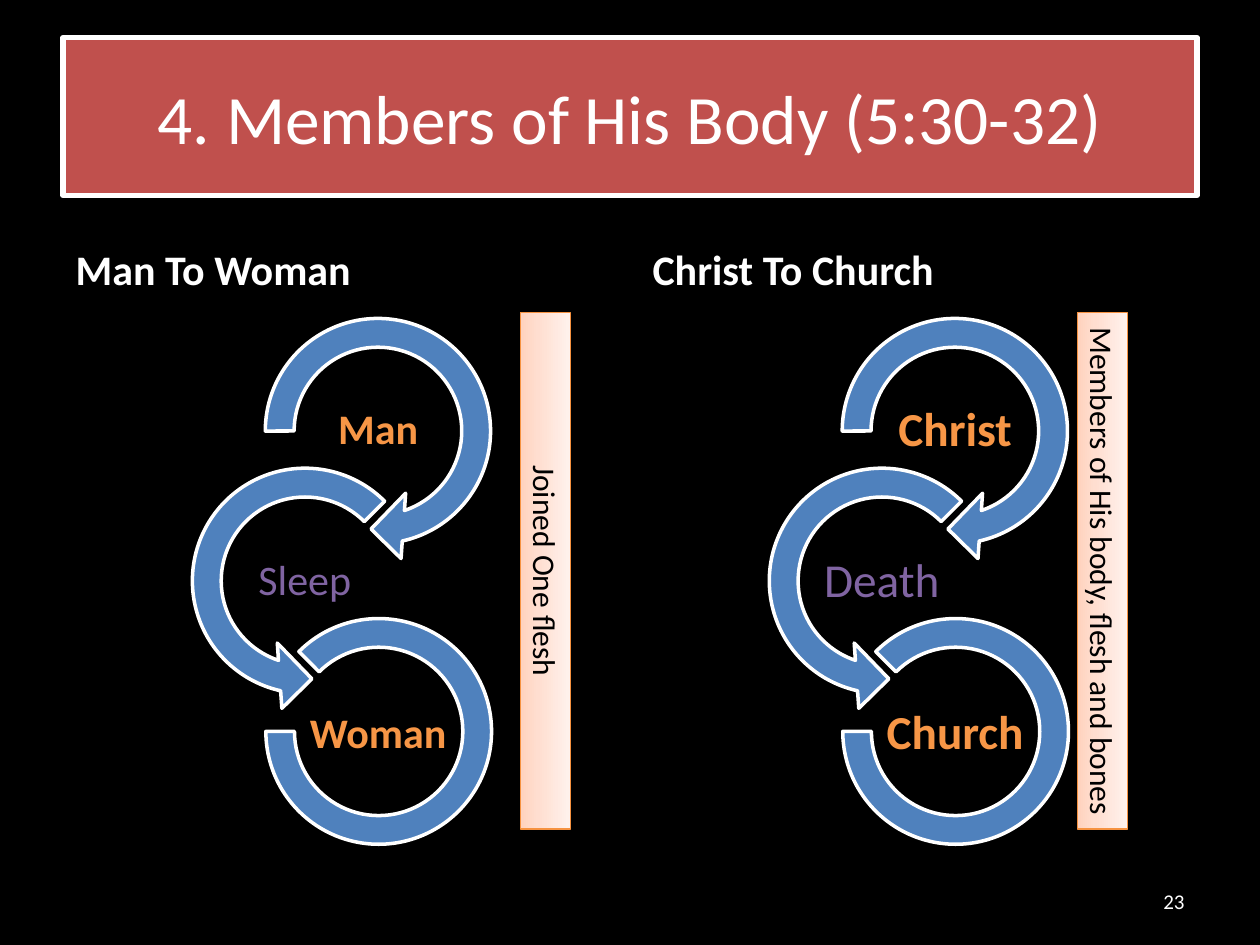
from copy import deepcopy
from dataclasses import dataclass

from pptx import Presentation
from pptx import util as u
from pptx.dml.color import RGBColor
from pptx.enum import shapes, text
from pptx.oxml import ns

BLACK = RGBColor(0x00, 0x00, 0x00)
WHITE = RGBColor(0xFF, 0xFF, 0xFF)
RED = RGBColor(0xC0, 0x50, 0x4D)
BLUE = RGBColor(0x4F, 0x81, 0xBD)
ORANGE = RGBColor(0xF7, 0x96, 0x46)
PURPLE = RGBColor(0x80, 0x64, 0xA2)
BAR_LINE = RGBColor(0xF6, 0x92, 0x40)
BAR_STOPS = (
    (0, RGBColor(0xFF, 0xD2, 0xBD)),
    (0.35, RGBColor(0xFF, 0xDE, 0xD0)),
    (1, RGBColor(0xFF, 0xF2, 0xED)),
)
FONT = "Calibri"
COLUMN_STEP = 11.63


@dataclass(frozen=True)
class Box:
    left: float
    top: float
    width: float
    height: float

    def lengths(self, shift: float = 0) -> tuple:
        values = (self.left + shift, self.top, self.width, self.height)
        return tuple(u.Cm(value) for value in values)


@dataclass(frozen=True)
class Step:
    kind: shapes.MSO_SHAPE
    box: Box
    adjustments: tuple
    label_box: Box
    color: RGBColor
    bold: bool


@dataclass(frozen=True)
class Column:
    heading: str
    placeholder: int
    labels: tuple
    label_size: float
    bar_text: str
    bar_left: float


STEPS = (
    Step(shapes.MSO_SHAPE.CIRCULAR_ARROW, Box(4.98, 6.05, 5.28, 5.28),
         (0.11, 11.42, 45, 108, 0.125), Box(6.15, 7.95, 2.95, 1.47), ORANGE, True),
    Step(shapes.MSO_SHAPE.LEFT_CIRCULAR_ARROW, Box(3.51, 9.07, 5.28, 5.28),
         (0.11, 11.42, 63, 189, 0.125), Box(4.67, 11, 2.95, 1.47), PURPLE, False),
    Step(shapes.MSO_SHAPE.BLOCK_ARC, Box(5.36, 12.47, 4.55, 4.55),
         (135, 108, 0.127), Box(6.15, 14.07, 2.95, 1.47), ORANGE, True),
)
COLUMNS = (
    Column("Man To Woman", 1, ("Man", "Sleep", "Woman"), 24, "Joined One flesh", 5.79),
    Column("Christ To Church", 3, ("Christ", "Death", "Church"), 27,
           "Members of His body, flesh and bones", 17.02),
)


def apply(target, formats: dict) -> None:
    for name, value in formats.items():
        setattr(target, name, value)


def write(shape, content: str, size: float, color: RGBColor, bold: bool = False,
          align=text.PP_ALIGN.LEFT, anchor=text.MSO_ANCHOR.MIDDLE):
    frame = shape.text_frame
    apply(frame, {"text": content, "word_wrap": True,
                  "auto_size": text.MSO_AUTO_SIZE.NONE, "vertical_anchor": anchor})
    paragraph = frame.paragraphs[0]
    paragraph.alignment = align
    font = paragraph.runs[0].font
    apply(font, {"name": FONT, "size": u.Pt(size), "bold": bold})
    font.color.rgb = color
    return frame


def outline(shape, color: RGBColor, width: float) -> None:
    shape.line.color.rgb = color
    shape.line.width = u.Pt(width)


def place(shape, box: Box, shift: float = 0) -> None:
    apply(shape, dict(zip(("left", "top", "width", "height"), box.lengths(shift))))


def add_step(slide, step: Step, label: str, size: float, shift: float) -> None:
    arc = slide.shapes.add_shape(step.kind, *step.box.lengths(shift))
    arc.shadow.inherit = False
    for index, value in enumerate(step.adjustments):
        arc.adjustments[index] = value
    arc.fill.solid()
    arc.fill.fore_color.rgb = BLUE
    outline(arc, WHITE, 2)

    label_shape = slide.shapes.add_textbox(*step.label_box.lengths(shift))
    frame = write(label_shape, label, size, step.color, step.bold, text.PP_ALIGN.CENTER)
    margins = ("margin_left", "margin_top", "margin_right", "margin_bottom")
    apply(frame, dict.fromkeys(margins, u.Cm(0.05)))
    frame.paragraphs[0].line_spacing = 0.9


def add_bar(slide, content: str, left: float) -> None:
    bar = slide.shapes.add_shape(shapes.MSO_SHAPE.RECTANGLE,
                                 *Box(left, 11, 10.41, 1.02).lengths())
    bar.rotation = 90
    bar.shadow.inherit = False
    bar.fill.gradient()
    bar.fill.gradient_angle = 90
    stop_list = bar.element.spPr.find(".//" + ns.qn("a:gsLst"))
    stop_list.append(deepcopy(stop_list[0]))
    for stop, (position, color) in zip(bar.fill.gradient_stops, BAR_STOPS):
        stop.position = position
        stop.color.rgb = color
    outline(bar, BAR_LINE, 0.75)
    write(bar, content, 18, BLACK, align=text.PP_ALIGN.CENTER, anchor=text.MSO_ANCHOR.TOP)


def add_column(slide, column: Column, shift: float) -> None:
    heading = slide.placeholders[column.placeholder]
    place(heading, Box(1.27, 4.27, 11.23, 1.78), shift)
    write(heading, column.heading, 24, WHITE, True, anchor=text.MSO_ANCHOR.BOTTOM)
    for step, label in zip(STEPS, column.labels):
        add_step(slide, step, label, column.label_size, shift)
    add_bar(slide, column.bar_text, column.bar_left)


def main() -> None:
    presentation = Presentation()
    apply(presentation, {"slide_width": u.Cm(25.4), "slide_height": u.Cm(19.05)})
    slide = presentation.slides.add_slide(presentation.slide_layouts[4])
    slide.background.fill.solid()
    slide.background.fill.fore_color.rgb = BLACK
    for index in (2, 4):
        element = slide.placeholders[index].element
        element.getparent().remove(element)

    title = slide.shapes.title
    place(title, Box(1.27, 0.76, 22.86, 3.18))
    title.fill.solid()
    title.fill.fore_color.rgb = RED
    outline(title, WHITE, 3)
    write(title, "4. Members of His Body (5:30-32)", 39.6, WHITE, align=text.PP_ALIGN.CENTER)

    for index, column in enumerate(COLUMNS):
        add_column(slide, column, index * COLUMN_STEP)

    number = slide.shapes.add_textbox(*Box(18.21, 17.65, 5.92, 1.02).lengths())
    write(number, "23", 12, WHITE, align=text.PP_ALIGN.RIGHT)
    presentation.save("out.pptx")


if __name__ == "__main__":
    main()
